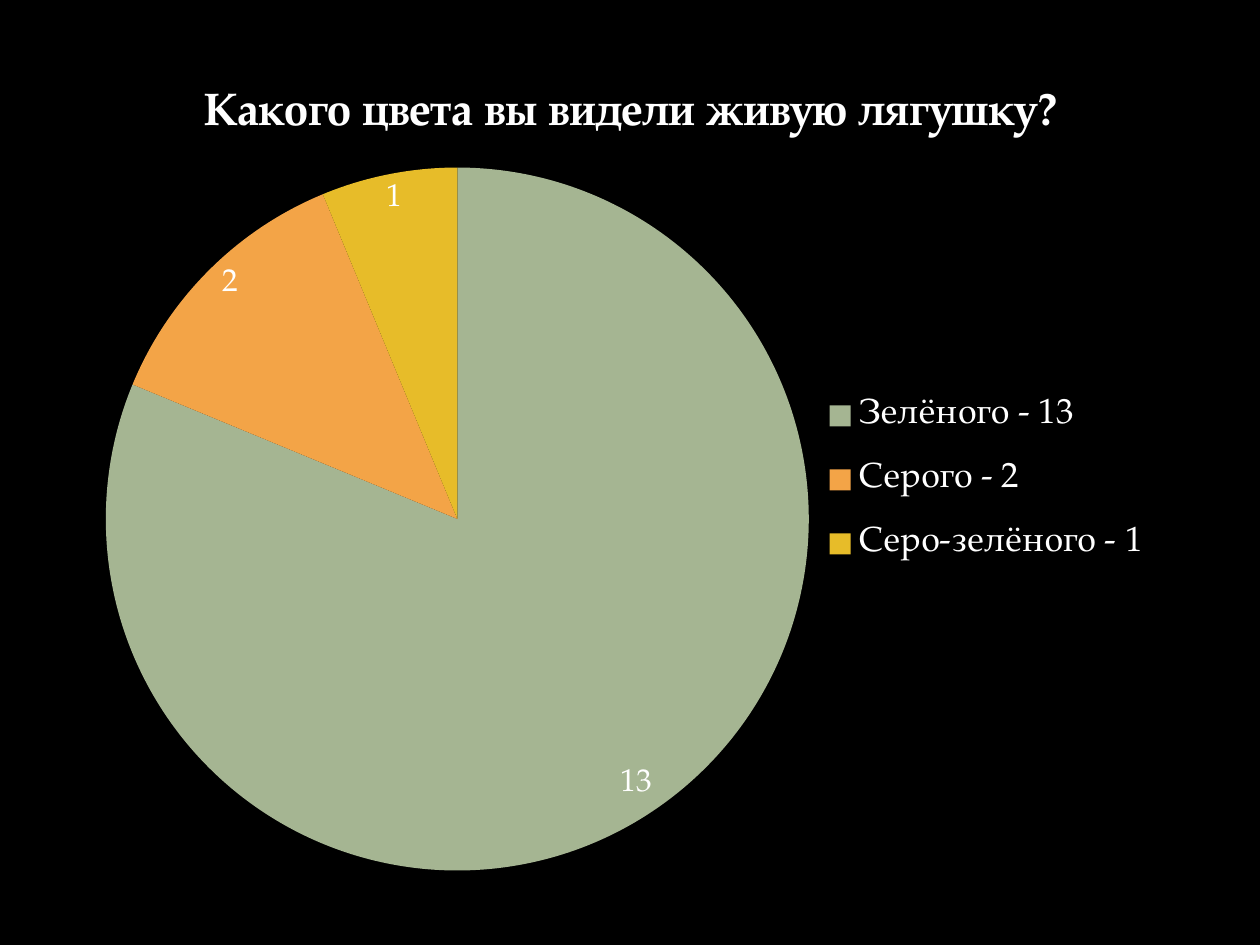
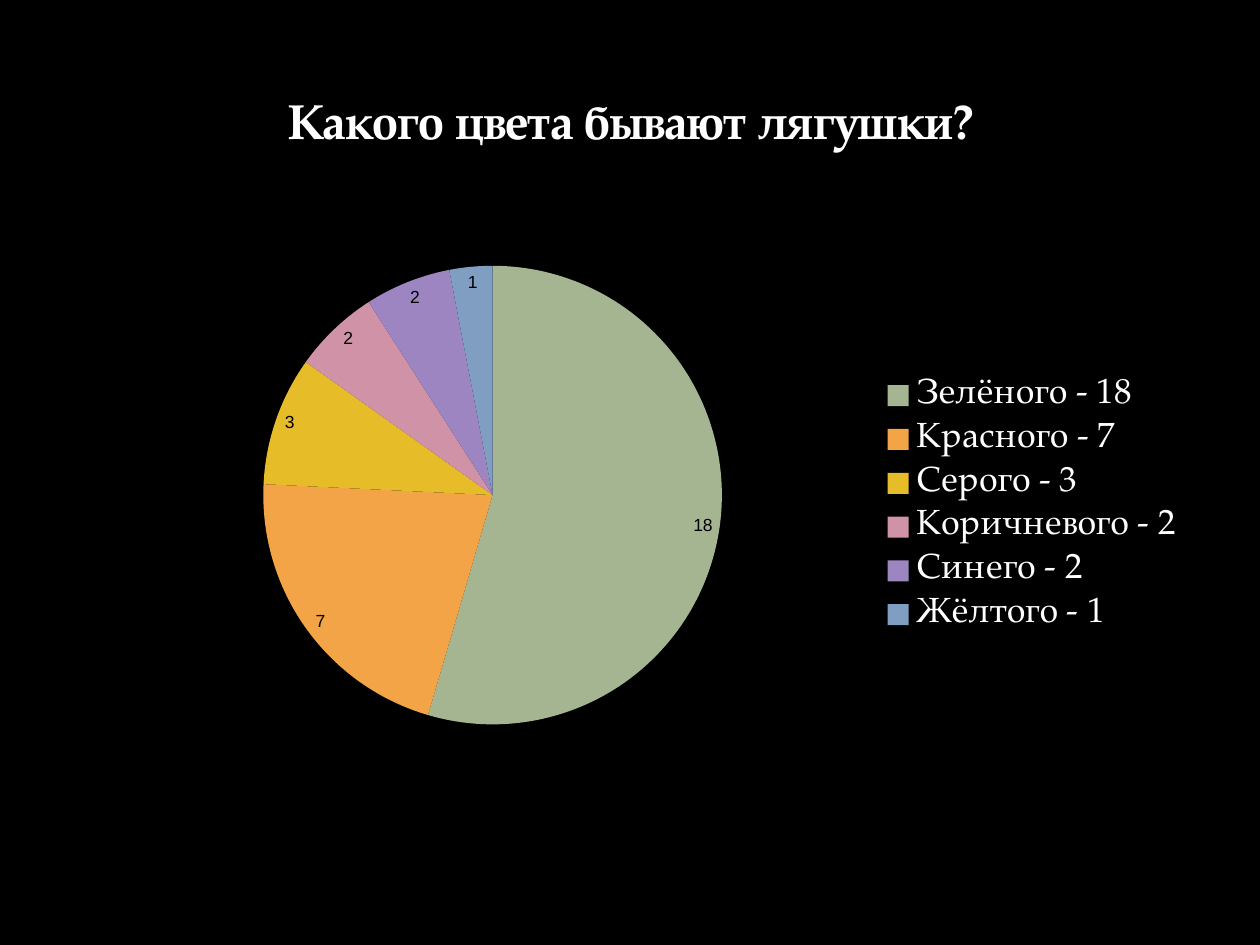
from dataclasses import dataclass

from lxml import etree
from pptx import Presentation
from pptx.chart.data import CategoryChartData
from pptx.dml.color import RGBColor
from pptx.enum.chart import XL_CHART_TYPE, XL_LABEL_POSITION, XL_LEGEND_POSITION
from pptx.oxml.ns import qn
from pptx.util import Inches, Pt

PIE = XL_CHART_TYPE.PIE
BEST = XL_LABEL_POSITION.BEST_FIT
RIGHT = XL_LEGEND_POSITION.RIGHT

FACE = "TeX Gyre Pagella"
BLACK, WHITE = "000000", "FFFFFF"
HUES = ["A5B592", "F3A447", "E7BC29", "D092A7", "9C85C0", "809EC2"]

Box = tuple[float, float, float, float]


@dataclass
class Label:
    size: int
    face: str
    hue: str


@dataclass
class Poll:
    """One question; every box is in inches on the slide."""
    title: str
    size: int
    series: str
    votes: dict[str, int]
    box: Box
    plot: Box
    label: Label
    legend: Box | None = None


POLLS = [
    Poll("Какого цвета вы видели живую лягушку?", 26,
         "Какого цвета вы видели живую лягушку?",
         {"Зелёного": 13, "Серого": 2, "Серо-зелёного": 1},
         (0.43, 0.44, 9.16, 6.61), (0.84, 1.33, 5.58, 5.58),
         Label(18, FACE, WHITE), (6.32, 2.94, 3.02, 1.74)),
    Poll("Какого цвета бывают лягушки?", 28, "Series 1",
         {"Зелёного": 18, "Красного": 7, "Серого": 3,
          "Коричневого": 2, "Синего": 2, "Жёлтого": 1},
         (0.51, 0.52, 9, 6.98), (2.09, 1.39, 3.64, 5.08),
         Label(10, "Arial", BLACK)),
]


def rgb(hue: str) -> RGBColor:
    return RGBColor.from_string(hue)


def style(font, size: int, face: str = FACE, hue: str = WHITE, bold: bool = False) -> None:
    font.size, font.name, font.bold = Pt(size), face, bold
    font.color.rgb = rgb(hue)


def place(part, index: int, area: Box, box: Box, inner: bool = False) -> None:
    """Lay a chart part out by hand, as fractions of the chart's box."""
    for old in part.findall(qn("c:layout")):
        part.remove(old)
    left, top, width, height = box
    x, y, w, h = area
    parts = (x - left) / width, (y - top) / height, w / width, h / height
    layout = etree.Element(qn("c:layout"))
    manual = etree.SubElement(layout, qn("c:manualLayout"))
    rules = [("layoutTarget", "inner")] if inner else []
    rules += [("xMode", "edge"), ("yMode", "edge"), *zip("xywh", map(str, parts))]
    for tag, value in rules:
        etree.SubElement(manual, qn(f"c:{tag}"), val=value)
    part.insert(index, layout)


def add_pie(slide, poll: Poll) -> None:
    data = CategoryChartData()
    data.categories = [f"{name} - {count}" for name, count in poll.votes.items()]
    data.add_series(poll.series, poll.votes.values())
    chart = slide.shapes.add_chart(PIE, *map(Inches, poll.box), data).chart
    style(chart.font, 18)

    chart.has_title = True
    frame = chart.chart_title.text_frame
    frame.text = poll.title
    style(frame.paragraphs[0].runs[0].font, poll.size, bold=True)
    chart.chart_title.include_in_layout = False

    chart.has_legend = True
    legend = chart.legend
    legend.position = RIGHT
    legend.include_in_layout = False
    style(legend.font, 20)
    if poll.legend:
        place(legend._element, 1, poll.legend, poll.box)

    plot = chart.plots[0]
    plot.vary_by_categories = True
    plot.has_data_labels = True
    labels = plot.data_labels
    labels.show_value = True
    labels.show_percentage = False
    labels.position = BEST
    style(labels.font, poll.label.size, poll.label.face, poll.label.hue)
    place(chart._chartSpace.chart.plotArea, 0, poll.plot, poll.box, inner=True)

    for index, hue in enumerate(HUES[:len(poll.votes)]):
        form = plot.series[0].points[index].format
        form.fill.solid()
        form.fill.fore_color.rgb = rgb(hue)
        form.line.fill.background()


def main() -> None:
    deck = Presentation()
    deck.slide_width, deck.slide_height = Inches(10), Inches(7.5)
    ground = deck.slide_master.background.fill
    ground.solid()
    ground.fore_color.rgb = rgb(BLACK)
    blank = deck.slide_layouts[6]
    for poll in POLLS:
        add_pie(deck.slides.add_slide(blank), poll)
    deck.save("out.pptx")


if __name__ == "__main__":
    main()
